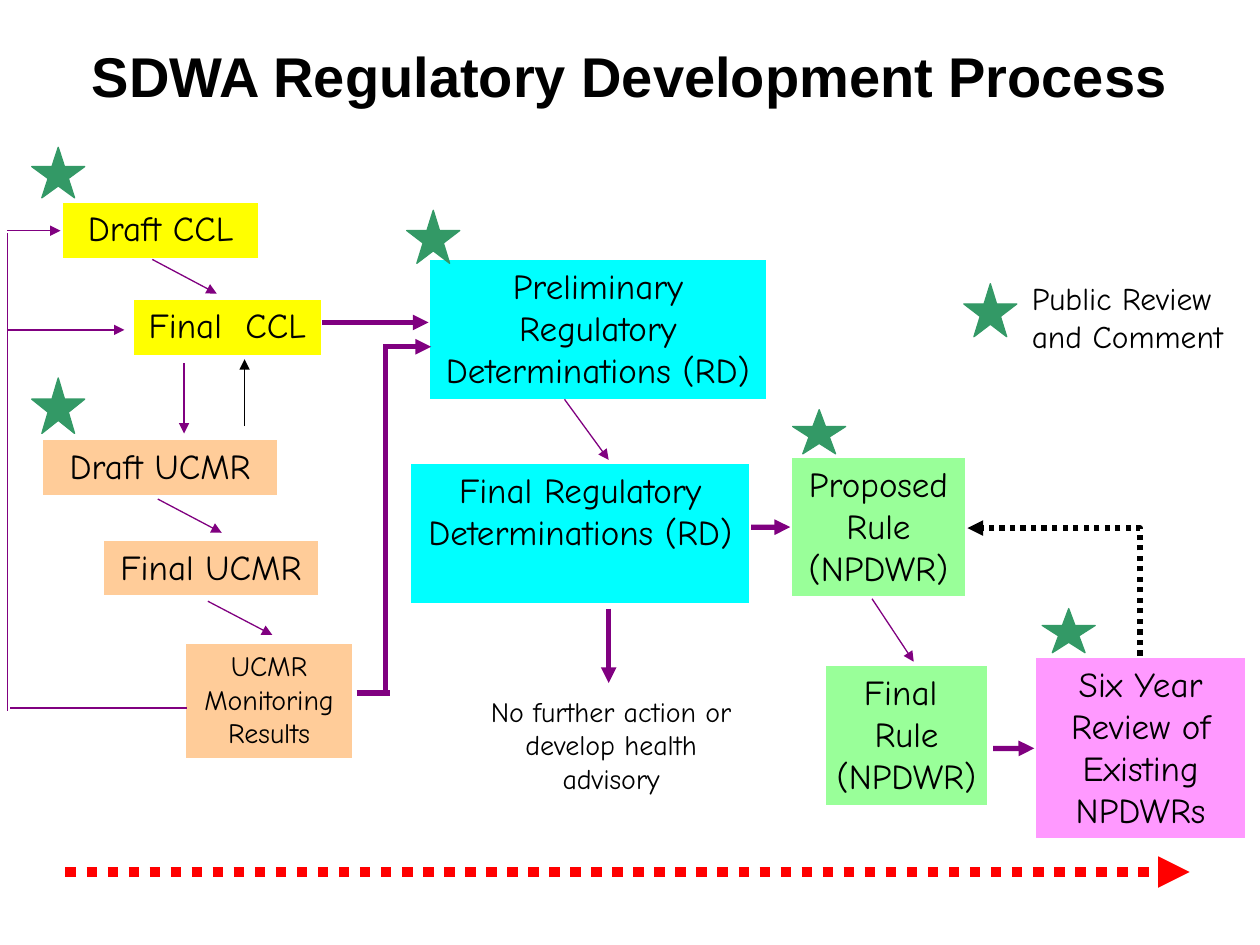
from lxml import etree
from pptx import Presentation
from pptx import util as u
from pptx.dml.color import RGBColor
from pptx.enum import dml, shapes, text
from pptx.oxml.ns import qn

COLORS = {
    "ccl": "FFFF00", "ucmr": "FFCC99", "determination": "00FFFF",
    "rule": "99FF99", "review": "FF99FF", "star": "339966",
    "flow": "800080", "timeline": "FF0000", "ink": "000000", "paper": "FFFFFF",
}
BODY_FONT = "Comic Neue"
TOP, LEFT, BOTTOM, RIGHT = range(4)
THIN, THICK, TIMELINE = 0.75, 3, 6

# key: wording, colour, (left, top, width, height) in cm, side inset, border, size
STEPS = {
    "draft_ccl": ("Draft CCL", "ccl", (1.22, 4.04, 4.04, 1.22), 0.25, 3, 20),
    "final_ccl": ("Final  CCL", "ccl", (2.64, 5.99, 3.89, 1.22), 0, 3, 20),
    "final_rule": ("Final \nRule (NPDWR)", "rule", (16.61, 13.39, 3.33, 2.87), 0, 2, 20),
    "six_year": ("Six Year Review of Existing NPDWRs", "review",
                 (20.85, 13.23, 4.29, 3.71), 0.25, 2, 20),
    "no_action": ("No further action or develop health advisory", None,
                  (9.73, 13.87, 5.18, 2.31), 0, 0.75, 16),
    "preliminary_rd": ("Preliminary Regulatory Determinations (RD)", "determination",
                       (8.64, 5.21, 6.83, 2.87), 0, 2, 20),
    "final_rd": ("Final Regulatory Determinations (RD)", "determination",
                 (8.26, 9.32, 6.88, 2.87), 0.25, 2, 20),
    "proposed_rule": ("Proposed Rule (NPDWR)", "rule", (15.93, 9.19, 3.56, 2.87), 0, 2, 20),
    "draft_ucmr": ("Draft UCMR", "ucmr", (0.84, 8.84, 4.78, 1.17), 0, 2, 20),
    "final_ucmr": ("Final UCMR", "ucmr", (2.06, 10.87, 4.39, 1.17), 0, 2, 20),
    "results": ("UCMR Monitoring Results", "ucmr", (3.71, 12.95, 3.43, 2.36), 0.25, 2, 16),
}

# left, top, height in cm; the last one belongs to the legend
STARS = [
    (0.64, 2.97, 1.02), (8.2, 4.24, 1.07), (21.01, 12.27, 0.89),
    (0.64, 7.62, 1.12), (15.98, 8.26, 0.89), (19.43, 5.72, 1.07),
]
STAR_WIDTH = 1.07

# start x, y, end x, y in cm
THIN_ARROWS = [
    (3.71, 7.32, 3.71, 8.74),      # final CCL to draft UCMR
    (0.15, 6.65, 2.51, 6.65),      # feedback to final CCL
    (11.38, 8.05, 12.27, 9.27),    # preliminary to final determinations
    (17.58, 12.07, 18.42, 13.34),  # proposed to final rule
    (3.07, 5.23, 4.37, 5.92),      # draft to final CCL
    (3.18, 10.06, 4.47, 10.74),    # draft to final UCMR
    (4.19, 12.12, 5.49, 12.8),     # final UCMR to results
]
THICK_ARROWS = [
    (6.5, 6.5, 8.64, 6.5),         # final CCL to preliminary determinations
    (12.27, 12.27, 12.27, 13.77),  # final determinations to no action
    (7.82, 6.99, 8.69, 6.99),      # results to preliminary determinations
]
THICK_LINES = [(7.19, 13.97, 7.87, 13.97), (7.77, 13.92, 7.77, 6.93)]
FEEDBACK_LINES = [(3.76, 14.27, 0.2, 14.27), (0.15, 14.33, 0.15, 4.7)]


def cm(values):
    return [u.Cm(value) for value in values]


def rgb(name):
    return RGBColor.from_string(COLORS[name])


def write(frame, wording, size, font=BODY_FONT, align=text.PP_ALIGN.CENTER, bold=False):
    frame.word_wrap = True
    frame.auto_size = text.MSO_AUTO_SIZE.NONE
    paragraph = frame.paragraphs[0]
    paragraph.text = wording
    paragraph.alignment = align
    paragraph.font.name = font
    paragraph.font.size = u.Pt(size)
    paragraph.font.bold = bold
    paragraph.font.color.rgb = rgb("ink")


def add_title(slide, wording):
    title = slide.shapes.title
    title.left, title.top, title.width, title.height = cm((0, 0.71, 25.4, 1.6))
    write(title.text_frame, wording, 32, font="Arial", bold=True)


def add_preset(slide, preset, bounds, fill, border, border_width):
    shape = slide.shapes.add_shape(preset, *cm(bounds))
    shape.shadow.inherit = False
    if fill:
        shape.fill.solid()
        shape.fill.fore_color.rgb = rgb(fill)
    else:
        shape.fill.background()
    shape.line.color.rgb = rgb(border)
    shape.line.width = u.Pt(border_width)
    return shape


def add_step(slide, wording, fill, bounds, inset, border_width, size):
    step = add_preset(slide, shapes.MSO_SHAPE.RECTANGLE, bounds, fill, "paper", border_width)
    frame = step.text_frame
    frame.margin_left = frame.margin_right = u.Cm(inset)
    frame.vertical_anchor = text.MSO_ANCHOR.TOP
    write(frame, wording, size)
    return step


def add_star(slide, left, top, height):
    bounds = (left, top, STAR_WIDTH, height)
    add_preset(slide, shapes.MSO_SHAPE.STAR_5_POINT, bounds, "star", "star", 0.75)


def add_flow(slide, ends, width, color="flow", arrow=True, dotted=False):
    flow = slide.shapes.add_connector(shapes.MSO_CONNECTOR.STRAIGHT, *cm(ends))
    flow.line.color.rgb = rgb(color)
    flow.line.width = u.Pt(width)
    if dotted:
        flow.line.dash_style = dml.MSO_LINE.ROUND_DOT
    properties = flow.element.spPr
    if arrow:
        etree.SubElement(properties.find(qn("a:ln")), qn("a:tailEnd"), type="triangle")
    etree.SubElement(properties, qn("a:effectLst"))
    return flow


def add_review_loop(slide):
    """Dotted elbow that rises from the six year review, then turns left."""
    loop = add_flow(slide, (19.96, 10.19, 22.53, 13.67), THICK, "ink", dotted=True)
    properties = loop.element.spPr
    properties.find(qn("a:prstGeom")).set("prst", "bentConnector2")
    frame = properties.find(qn("a:xfrm"))
    frame.set("rot", "5400000")
    frame.set("flipH", "1")


def add_legend(slide):
    legend = slide.shapes.add_textbox(*cm((20.55, 5.51, 4.42, 1.78)))
    write(legend.text_frame, "Public Review\nand Comment", 18, align=text.PP_ALIGN.LEFT)


def main():
    prs = Presentation()
    prs.slide_width, prs.slide_height = cm((25.4, 19.05))
    slide = prs.slides.add_slide(prs.slide_layouts[5])
    add_title(slide, "SDWA Regulatory Development Process")

    # Timeline
    add_flow(slide, (1.32, 17.58, 23.98, 17.58), TIMELINE, "timeline", dotted=True)

    # Steps and public review marks
    steps = {key: add_step(slide, *step) for key, step in STEPS.items()}
    for star in STARS:
        add_star(slide, *star)
    add_legend(slide)

    # Free-standing arrows and lines
    for ends in THIN_ARROWS:
        add_flow(slide, ends, THIN)
    for ends in THICK_ARROWS:
        add_flow(slide, ends, THICK)
    for ends in THICK_LINES:
        add_flow(slide, ends, THICK, arrow=False)
    for ends in FEEDBACK_LINES:
        add_flow(slide, ends, THIN, arrow=False)
    add_flow(slide, (4.93, 8.59, 4.93, 7.24), THIN, "ink")
    add_review_loop(slide)

    # Arrows joined to the step they reach
    joined = [
        ((0.15, 4.65, 1.22, 4.65), THIN, "draft_ccl"),
        ((15.14, 10.63, 15.93, 10.63), THICK, "proposed_rule"),
        ((20.02, 15.09, 20.85, 15.09), THICK, "six_year"),
    ]
    for ends, width, target in joined:
        add_flow(slide, ends, width).end_connect(steps[target], LEFT)

    prs.save("out.pptx")


if __name__ == "__main__":
    main()
